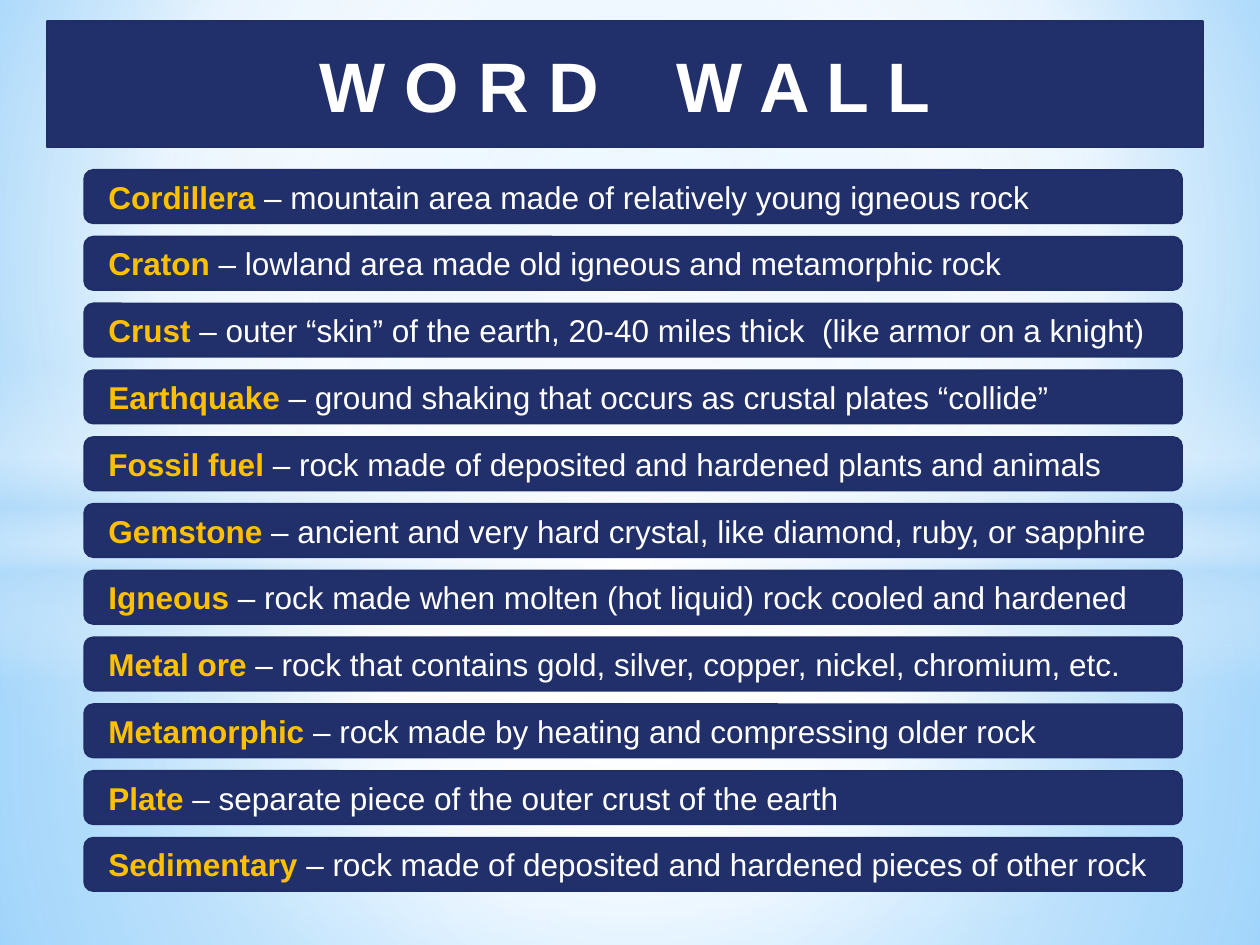
from lxml import etree
from pptx import Presentation
from pptx.dml.color import RGBColor
from pptx.enum import shapes, text
from pptx.oxml import ns
from pptx.util import Inches, Pt

COLORS = {
    "navy": "21306A",
    "edge": "1F2E69",
    "gold": "FFC000",
    "white": "FFFFFF",
    "mist": "B4DCFA",
    "sky": "9ED5FF",
    "deep_sky": "5BB9FF",
}

TERMS = [
    ("Cordillera", "mountain area made of relatively young igneous rock"),
    ("Craton", "lowland area made old igneous and metamorphic rock"),
    ("Crust", "outer “skin” of the earth, 20-40 miles thick  (like armor on a knight)"),
    ("Earthquake", "ground shaking that occurs as crustal plates “collide”"),
    ("Fossil fuel", "rock made of deposited and hardened plants and animals"),
    ("Gemstone", "ancient and very hard crystal, like diamond, ruby, or sapphire"),
    ("Igneous", "rock made when molten (hot liquid) rock cooled and hardened"),
    ("Metal ore", "rock that contains gold, silver, copper, nickel, chromium, etc."),
    ("Metamorphic", "rock made by heating and compressing older rock"),
    ("Plate", "separate piece of the outer crust of the earth"),
    ("Sedimentary", "rock made of deposited and hardened pieces of other rock"),
]

CENTER = (50, 50, 50, 50)
RECT = shapes.MSO_SHAPE.RECTANGLE
OVAL = shapes.MSO_SHAPE.OVAL
GLOWS = [
    (RECT, 4.23, 3.27, [(0, "white", 91), (37, "white", 76), (100, "mist", 79)], CENTER),
    (RECT, 0, 4.23, [(0, "white", 89), (48, "white", 62), (100, "mist", 79)], CENTER),
    (RECT, 2.9, 2.5, [(0, "white", 0), (29, "white", 30), (45, "mist", 40),
                      (55, "white", 26), (65, "mist", 60), (100, "white", 0)], None),
    (OVAL, 1.75, 5.58, [(0, "white", 100), (54, "white", 0)], CENTER),
]


def rgb(name):
    return RGBColor.from_string(COLORS[name])


def add_node(parent, tag, **attrs):
    return etree.SubElement(parent, ns.qn(tag), {k: str(v) for k, v in attrs.items()})


def set_gradient(fill, holder, stops, focus):
    fill.solid()
    fill.fore_color.rgb = rgb("white")
    solid = holder.find(ns.qn("a:solidFill"))
    grad = etree.Element(ns.qn("a:gradFill"), rotWithShape="1")
    stop_list = add_node(grad, "a:gsLst")
    for position, color, opacity in stops:
        stop = add_node(stop_list, "a:gs", pos=position * 1000)
        tint = add_node(stop, "a:srgbClr", val=COLORS[color])
        if opacity < 100:
            add_node(tint, "a:alpha", val=opacity * 1000)
    if focus:
        route = add_node(grad, "a:path", path="circle")
        sides = {side: inset * 1000 for side, inset in zip("ltrb", focus)}
        add_node(route, "a:fillToRect", **sides)
    else:
        add_node(grad, "a:lin", ang=90 * 60000, scaled=0)
    holder.replace(solid, grad)


def paint_background(s):
    fill = s.background.fill
    stops = [(0, "sky", 100), (60, "white", 100), (100, "deep_sky", 100)]
    set_gradient(fill, s.element.find(".//" + ns.qn("p:bgPr")), stops, (20, 10, 20, 60))


def add_glow(s, kind, top, height, stops, focus):
    sp = s.shapes.add_shape(kind, 0, Inches(top), Inches(10), Inches(height))
    sp.shadow.inherit = False
    sp.line.fill.background()
    set_gradient(sp.fill, sp.element.spPr, stops, focus)


def style_panel(sp, size, align):
    sp.fill.solid()
    sp.fill.fore_color.rgb = rgb("navy")
    sp.line.color.rgb = rgb("edge")
    sp.line.width = Pt(1.25)
    tf = sp.text_frame
    tf.word_wrap = True
    tf.auto_size = text.MSO_AUTO_SIZE.NONE
    tf.vertical_anchor = text.MSO_ANCHOR.MIDDLE
    p = tf.paragraphs[0]
    p.alignment = align
    p.font.name = "Arial"
    p.font.size = Pt(size)
    p.font.color.rgb = rgb("white")
    return p


def add_title(s):
    sp = s.shapes.title
    sp.left, sp.top = Inches(0.37), Inches(0.17)
    sp.width, sp.height = Inches(9.18), Inches(1)
    geometry = add_node(sp.element.spPr, "a:prstGeom", prst="roundRect")
    add_node(geometry, "a:avLst")
    sp.text_frame.text = "W O R D    W A L L"
    p = style_panel(sp, 40, text.PP_ALIGN.CENTER)
    p.font.bold = True
    s.shapes.element.append(sp.element)


def add_term(s, top, term, meaning):
    sp = s.shapes.add_shape(shapes.MSO_SHAPE.ROUNDED_RECTANGLE, Inches(0.67),
                            Inches(top), Inches(8.71), Inches(0.42))
    sp.shadow.inherit = False
    p = style_panel(sp, 18, text.PP_ALIGN.LEFT)
    sp.text_frame.margin_left = Inches(0.17)
    r = p.add_run()
    r.text = term
    r.font.bold = True
    r.font.color.rgb = rgb("gold")
    p.add_run().text = f" – {meaning}"


def main():
    prs = Presentation()
    prs.slide_width, prs.slide_height = Inches(10), Inches(7.5)
    s = prs.slides.add_slide(prs.slide_layouts[5])
    paint_background(s)
    for glow in GLOWS:
        add_glow(s, *glow)
    add_title(s)
    for row, (term, meaning) in enumerate(TERMS):
        add_term(s, 1.35 + 0.53 * row, term, meaning)
    prs.save("out.pptx")


if __name__ == "__main__":
    main()
